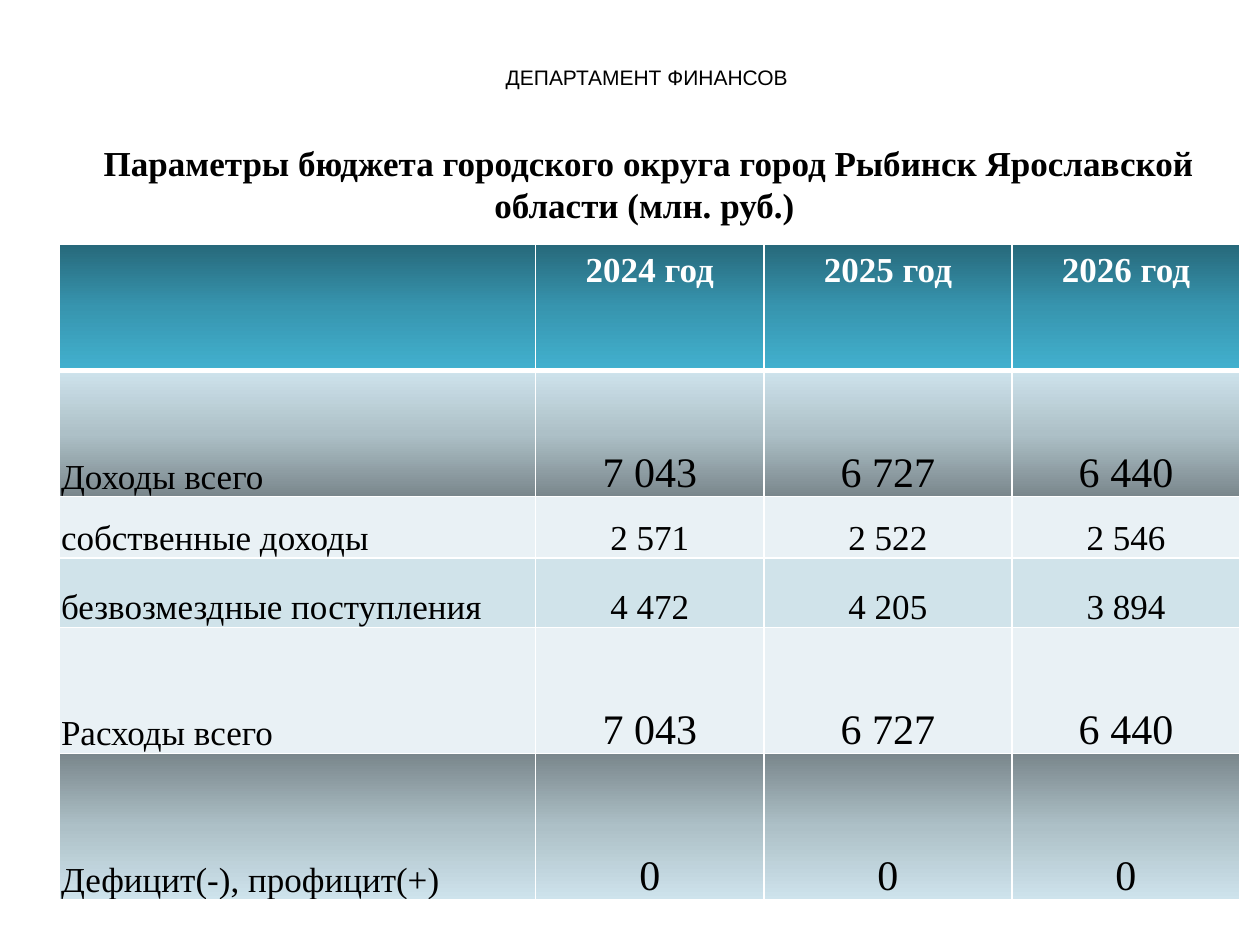
"""Build the slide with the budget parameters table of the city of Rybinsk."""
from dataclasses import dataclass
from typing import Optional

import pptx
import pptx.dml.color
import pptx.enum.text
import pptx.oxml
import pptx.oxml.ns
import pptx.util
from pptx.dml.color import RGBColor
from pptx.util import Cm

BLACK = RGBColor(0x00, 0x00, 0x00)
WHITE = RGBColor(0xFF, 0xFF, 0xFF)
PALE = RGBColor(0xE9, 0xF1, 0xF5)
LIGHT_BLUE = RGBColor(0xD0, 0xE3, 0xEA)
TEAL_STOPS = (RGBColor(0x27, 0x69, 0x7B), RGBColor(0x37, 0x95, 0xAF), RGBColor(0x42, 0xB1, 0xCF))
GREY_STOPS = (RGBColor(0x7A, 0x87, 0x8C), RGBColor(0xAD, 0xC0, 0xC7), RGBColor(0xCE, 0xE3, 0xEC))
SERIF = "Times New Roman"
COLUMN_WIDTHS = (9.6, 4.6, 5.0, 4.6)


@dataclass(frozen=True)
class Heading:
    text: str
    left: float
    top: float
    width: float
    height: float
    font: str
    size: int
    bold: bool


@dataclass(frozen=True)
class BudgetRow:
    texts: tuple[str, ...]
    height: float
    stops: tuple[RGBColor, ...]
    angle: int = 90
    value_size: int = 20
    header: bool = False
    top_line: Optional[int] = 1
    bottom_line: int = 1


HEADINGS = (
    Heading("ДЕПАРТАМЕНТ ФИНАНСОВ ", 9.1, 1.17, 8, 0.76, "Arial", 12, False),
    Heading("Параметры бюджета городского округа город Рыбинск Ярославской области (млн. руб.) ",
            1.78, 2.72, 22.6, 1.96, SERIF, 20, True),
)
BUDGET_ROWS = (
    BudgetRow(("", "2024 год", "2025 год", "2026 год"), 2.54, TEAL_STOPS,
              header=True, bottom_line=3),
    BudgetRow(("Доходы всего", "7 043", "6 727", "6 440"), 2.54, GREY_STOPS,
              angle=270, value_size=24, top_line=3),
    BudgetRow(("собственные доходы", "2 571", "2 522", "2 546"), 1.24, (PALE,)),
    BudgetRow(("безвозмездные поступления", "4 472", "4 205", "3 894"), 1.4, (LIGHT_BLUE,)),
    BudgetRow(("Расходы всего", "7 043", "6 727", "6 440"), 2.54, (PALE,), value_size=24),
    BudgetRow(("Дефицит(-), профицит(+)", "0", "0", "0"), 2.95, GREY_STOPS, value_size=24),
)


def style_paragraph(paragraph, font: str, size: int, bold: bool, color: RGBColor,
                    centred: bool) -> None:
    align = pptx.enum.text.PP_ALIGN
    paragraph.alignment = align.CENTER if centred else align.LEFT
    paragraph.font.name = font
    paragraph.font.size = pptx.util.Pt(size)
    paragraph.font.bold = bold
    paragraph.font.color.rgb = color


def add_heading(slide, heading: Heading) -> None:
    box = slide.shapes.add_textbox(Cm(heading.left), Cm(heading.top),
                                   Cm(heading.width), Cm(heading.height))
    frame = box.text_frame
    frame.word_wrap = True
    frame.auto_size = pptx.enum.text.MSO_AUTO_SIZE.SHAPE_TO_FIT_TEXT
    frame.text = heading.text
    style_paragraph(frame.paragraphs[0], heading.font, heading.size, heading.bold, BLACK, True)


def append_xml(parent, xml: str) -> None:
    parent.append(pptx.oxml.parse_xml(xml))


def draw_borders(cell, top: int, bottom: int) -> None:
    properties = cell._tc.get_or_add_tcPr()
    for side, width in (("L", 1), ("R", 1), ("T", top), ("B", bottom)):
        append_xml(properties,
                   f'<a:ln{side} {pptx.oxml.ns.nsdecls("a")} w="{pptx.util.Pt(width)}">'
                   f'<a:solidFill><a:srgbClr val="{WHITE}"/></a:solidFill></a:ln{side}>')


def fill_cell(cell, stops: tuple[RGBColor, ...], angle: int) -> None:
    if len(stops) == 1:
        cell.fill.solid()
        cell.fill.fore_color.rgb = stops[0]
        return
    step = 100000 // (len(stops) - 1)
    marks = "".join(f'<a:gs pos="{index * step}"><a:srgbClr val="{color}"/></a:gs>'
                    for index, color in enumerate(stops))
    append_xml(cell._tc.get_or_add_tcPr(),
               f'<a:gradFill {pptx.oxml.ns.nsdecls("a")} rotWithShape="1"><a:gsLst>{marks}</a:gsLst>'
               f'<a:lin ang="{angle * 60000}" scaled="0"/></a:gradFill>')


def fill_row(cells, row: BudgetRow) -> None:
    for column, (cell, text) in enumerate(zip(cells, row.texts)):
        cell.text = text
        size = row.value_size if column else 20
        style_paragraph(cell.text_frame.paragraphs[0], SERIF, size, row.header,
                        WHITE if row.header else BLACK, column > 0)
        if not row.header:
            cell.vertical_anchor = pptx.enum.text.MSO_ANCHOR.BOTTOM
            cell.margin_left = cell.margin_right = cell.margin_top = Cm(0.03)
            cell.margin_bottom = 0
        draw_borders(cell, row.top_line, row.bottom_line)
        fill_cell(cell, row.stops, row.angle)


def add_budget_table(slide) -> None:
    table = slide.shapes.add_table(
        len(BUDGET_ROWS), len(COLUMN_WIDTHS), Cm(1.2), Cm(4.93),
        Cm(sum(COLUMN_WIDTHS)), Cm(sum(row.height for row in BUDGET_ROWS))).table
    table.first_row = table.horz_banding = False
    for column, width in zip(table.columns, COLUMN_WIDTHS):
        column.width = Cm(width)
    for table_row, row in zip(table.rows, BUDGET_ROWS):
        table_row.height = Cm(row.height)
        fill_row(table_row.cells, row)


def main() -> None:
    presentation = pptx.Presentation()
    presentation.slide_width = Cm(25.4)
    presentation.slide_height = Cm(19.05)
    slide = presentation.slides.add_slide(presentation.slide_layouts[6])
    for heading in HEADINGS:
        add_heading(slide, heading)
    add_budget_table(slide)
    presentation.save("out.pptx")


if __name__ == "__main__":
    main()
